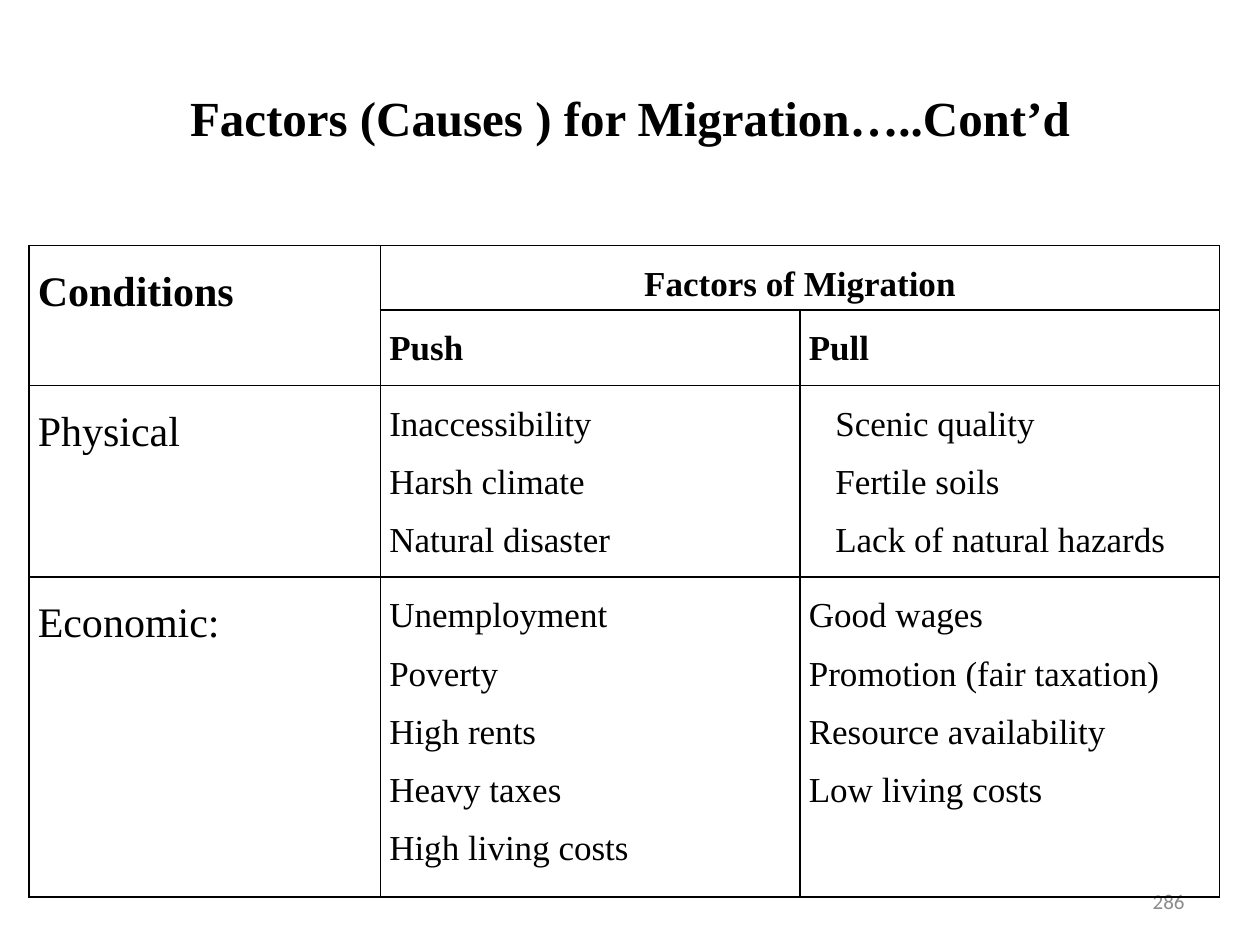
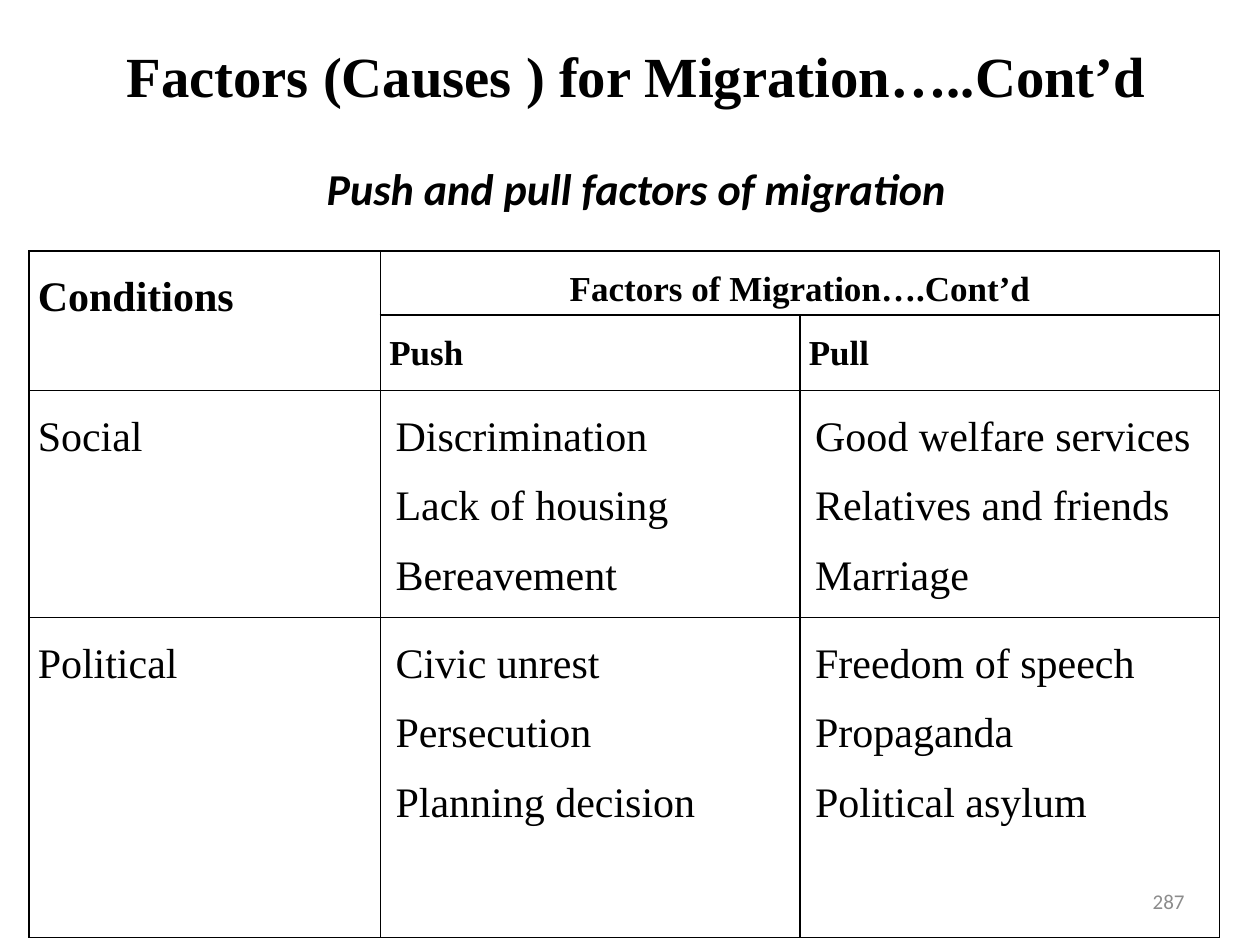
from dataclasses import dataclass

from pptx import Presentation
from pptx.dml.color import RGBColor
from pptx.enum.text import MSO_ANCHOR as Anchor, PP_ALIGN as Align
from pptx.oxml import parse_xml
from pptx.oxml.ns import nsdecls
from pptx.util import Inches, Pt


@dataclass(frozen=True)
class Theme:
    ink: str = "000000"
    muted: str = "8C8C8C"
    serif: str = "Times New Roman"
    sans: str = "Calibri"
    head_size: int = 20
    label_size: int = 24
    number_size: int = 12
    border: float = 1
    line_spacing: float = 1.5
    inset: float = 0.07


THEME = Theme()
TITLE = "Factors (Causes ) for Migration…..Cont’d"
COLUMNS = (2.79, 3.33, 3.33)
TABLE_LEFT = 0.23


def text_format(size, name=THEME.serif, color=THEME.ink, **extra):
    return {"size": Pt(size), "name": name, "color": color, **extra}


def add_span(para, text, formats):
    span = para.add_run()
    span.text = text
    for key, value in formats.items():
        if key == "color":
            span.font.color.rgb = RGBColor.from_string(value)
        else:
            setattr(span.font, key, value)


def add_text(page, place, lines, align, gap=0):
    """Add a middle-anchored box; lines holds (text, formats) pairs."""
    box = page.shapes.add_textbox(*map(Inches, place))
    frame = box.text_frame
    frame.word_wrap = True
    frame.vertical_anchor = Anchor.MIDDLE
    for index, (text, formats) in enumerate(lines):
        para = frame.add_paragraph() if index else frame.paragraphs[0]
        para.alignment = align
        if index:
            para.space_before = Pt(gap)
        add_span(para, text, formats)


def add_page_number(page, number):
    formats = text_format(THEME.number_size, THEME.sans, THEME.muted)
    add_text(page, (7.17, 6.95, 2.33, 0.4), [(number, formats)], Align.RIGHT)


def add_borders(cell):
    properties = cell._tc.get_or_add_tcPr()
    for position, side in enumerate("LRTB"):
        properties.insert(position, parse_xml(
            f'<a:ln{side} {nsdecls("a")} w="{Pt(THEME.border)}"><a:solidFill>'
            f'<a:srgbClr val="{THEME.ink}"/></a:solidFill></a:ln{side}>'))


def fill_cell(cell, lines, size, bold=False, align=Align.JUSTIFY, inset=THEME.inset):
    cell.margin_left = Inches(inset)
    frame = cell.text_frame
    for index, text in enumerate(lines):
        para = frame.add_paragraph() if index else frame.paragraphs[0]
        para.alignment = align
        para.line_spacing = THEME.line_spacing
        add_span(para, text, text_format(size, bold=bold))


def add_factor_table(page, top, row_heights, heading, factors, size, push_inset, pull_insets):
    """Add the table; factors holds (condition, push lines, pull lines) rows."""
    table = page.shapes.add_table(
        len(row_heights), len(COLUMNS), Inches(TABLE_LEFT), Inches(top),
        Inches(sum(COLUMNS)), Inches(sum(row_heights))).table
    table.first_row = table.horz_banding = False
    for column, width in zip(table.columns, COLUMNS):
        column.width = Inches(width)
    for row, height in zip(table.rows, row_heights):
        row.height = Inches(height)
    for cell in table.iter_cells():
        cell.margin_left = cell.margin_right = Inches(THEME.inset)
        cell.margin_top = cell.margin_bottom = 0
        cell.fill.background()
        add_borders(cell)
    table.cell(0, 0).merge(table.cell(1, 0))
    table.cell(0, 1).merge(table.cell(0, 2))

    fill_cell(table.cell(0, 0), ["Conditions"], THEME.label_size, bold=True)
    fill_cell(table.cell(0, 1), [heading], THEME.head_size, bold=True, align=Align.CENTER)
    for column, text in enumerate(("Push", "Pull"), 1):
        fill_cell(table.cell(1, column), [text], THEME.head_size, bold=True)
    for row, ((condition, push, pull), pull_inset) in enumerate(zip(factors, pull_insets), 2):
        fill_cell(table.cell(row, 0), [condition], THEME.label_size)
        fill_cell(table.cell(row, 1), push, size, inset=push_inset)
        fill_cell(table.cell(row, 2), pull, size, inset=pull_inset)


def add_physical_economic(deck):
    page = deck.slides.add_slide(deck.slide_layouts[6])
    add_text(page, (0.5, 0.3, 9, 1.25), [(TITLE, text_format(28, bold=True))], Align.CENTER)
    add_page_number(page, "286")
    factors = [
        ("Physical",
         ["Inaccessibility", "Harsh climate", "Natural disaster"],
         ["Scenic quality", "Fertile soils", "Lack of natural hazards"]),
        ("Economic:",
         ["Unemployment", "Poverty", "High rents", "Heavy taxes", "High living costs"],
         ["Good wages", "Promotion (fair taxation)", "Resource availability",
          "Low living costs"]),
    ]
    add_factor_table(page, 1.95, (0.51, 0.55, 1.52, 2.54), "Factors of Migration",
                     factors, 20, THEME.inset, (0.28, THEME.inset))


def add_social_political(deck):
    page = deck.slides.add_slide(deck.slide_layouts[6])
    subtitle = text_format(25.2, THEME.sans, bold=True, italic=True)
    add_text(page, (0.55, 0.23, 9, 1.56),
             [(TITLE, text_format(32.4, bold=True)),
              ("Push and pull factors of migration", subtitle)], Align.CENTER, gap=30)
    add_page_number(page, "287")
    factors = [
        ("Social",
         ["Discrimination", "Lack of housing", "Bereavement"],
         ["Good welfare services", "Relatives and friends", "Marriage"]),
        ("Political",
         ["Civic unrest", "Persecution", "Planning decision"],
         ["Freedom of speech", "Propaganda", "Political asylum"]),
    ]
    add_factor_table(page, 1.99, (0.51, 0.55, 1.66, 2.54), "Factors of Migration….Cont’d",
                     factors, 24, 0.12, (0.12, 0.12))


def main():
    deck = Presentation()
    deck.slide_width, deck.slide_height = Inches(10), Inches(7.5)
    add_physical_economic(deck)
    add_social_political(deck)
    deck.save("out.pptx")


if __name__ == "__main__":
    main()
